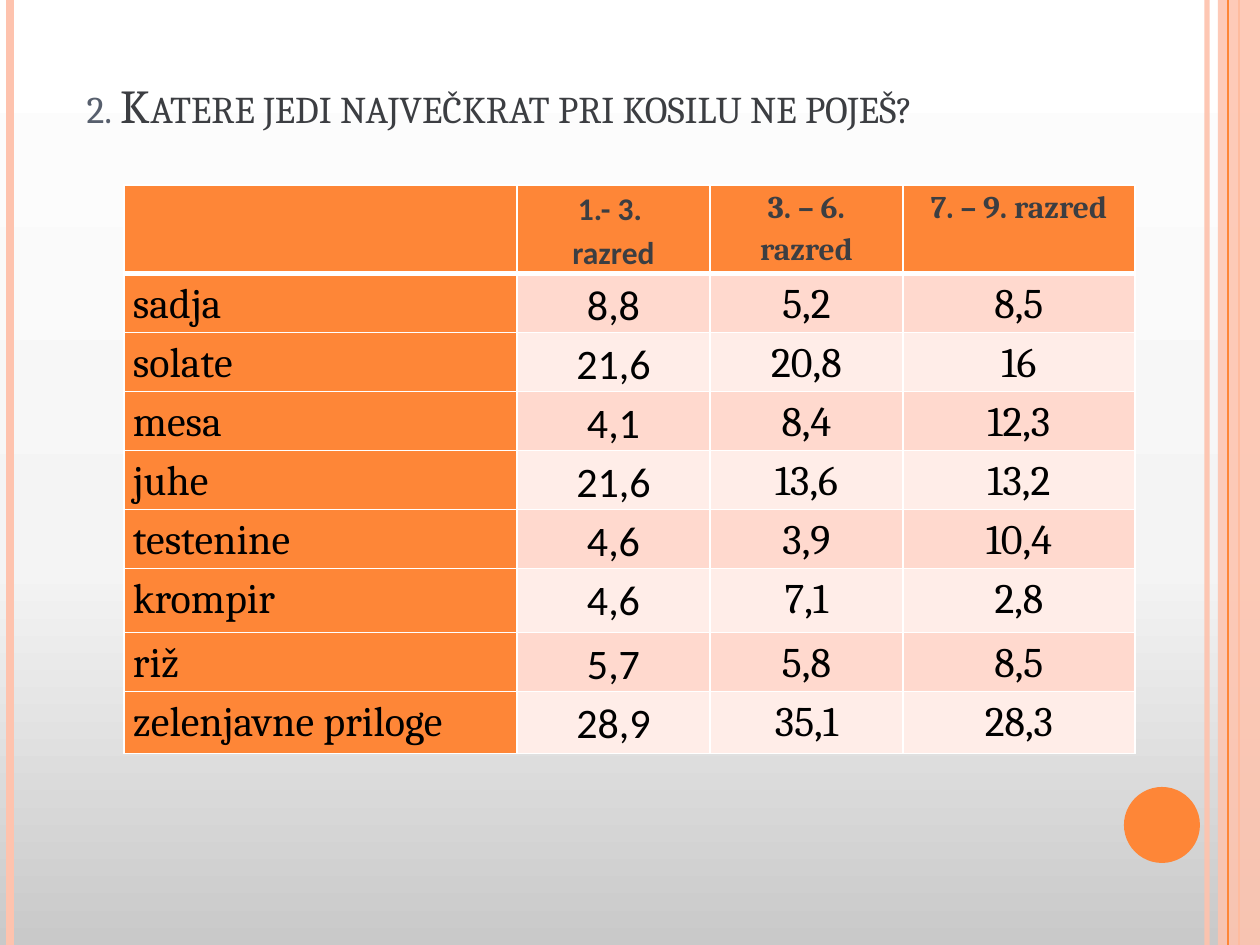
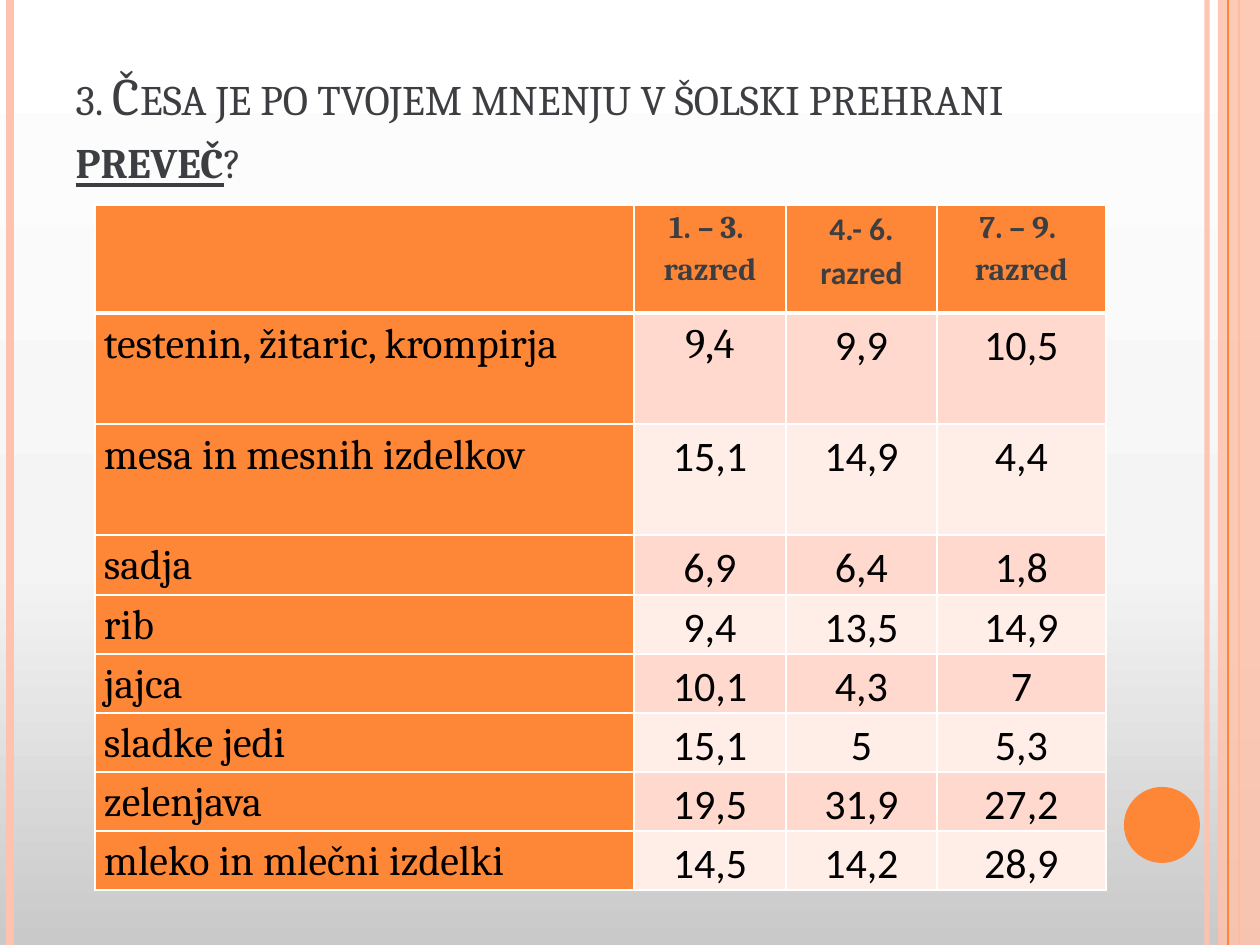
import copy

import lxml.etree
import pptx
import pptx.dml.color
import pptx.enum.shapes
import pptx.enum.text
import pptx.oxml.ns
import pptx.util

RGBColor = pptx.dml.color.RGBColor
ORANGE = RGBColor(0xFE, 0x86, 0x37)
PEACH = RGBColor(0xFE, 0xC3, 0xAE)
BAND_DARK = RGBColor(0xFF, 0xD9, 0xCE)
BAND_LIGHT = RGBColor(0xFF, 0xED, 0xE8)
CHARCOAL = RGBColor(0x3C, 0x3E, 0x42)
SLATE = RGBColor(0x57, 0x5F, 0x6D)
BLACK = RGBColor(0, 0, 0)
WHITE = RGBColor(0xFF, 0xFF, 0xFF)
BACKGROUND = [(0, RGBColor(0xC9, 0xC9, 0xC9)),
              (0.4, RGBColor(0xF4, 0xF4, 0xF4)),
              (1, WHITE)]

SERIF, SANS = "Cambria", "Calibri"
WIDTH, HEIGHT = 1260, 945
CELL_INSET = 9

# Table rows: a label and one value per group of classes
NOT_EATEN = [
    ("", "1.- 3. \nrazred", "3. – 6. razred", "7. – 9. razred"),
    ("sadja", "8,8", "5,2", "8,5"),
    ("solate", "21,6", "20,8", "16"),
    ("mesa", "4,1", "8,4", "12,3"),
    ("juhe", "21,6", "13,6", "13,2"),
    ("testenine", "4,6", "3,9", "10,4"),
    ("krompir", "4,6", "7,1", "2,8"),
    ("riž", "5,7", "5,8", "8,5"),
    ("zelenjavne priloge", "28,9", "35,1", "28,3"),
]
TOO_MUCH = [
    ("", "1. – 3. \nrazred", "4.- 6.\nrazred", "7. – 9. \nrazred"),
    ("testenin, žitaric, krompirja", "9,4", "9,9", "10,5"),
    ("mesa in mesnih izdelkov", "15,1", "14,9", "4,4"),
    ("sadja", "6,9", "6,4", "1,8"),
    ("rib", "9,4", "13,5", "14,9"),
    ("jajca", "10,1", "4,3", "7"),
    ("sladke jedi", "15,1", "5", "5,3"),
    ("zelenjava", "19,5", "31,9", "27,2"),
    ("mleko in mlečni izdelki", "14,5", "14,2", "28,9"),
]


def px(length):
    return round(length * 914400 / 126)


def sub_element(parent, tag, **attributes):
    return lxml.etree.SubElement(parent, pptx.oxml.ns.qn(tag), **attributes)


def write_run(paragraph, text, size, color, font=SERIF, bold=False,
              underline=False, small_caps=False):
    run = paragraph.add_run()
    run.text = text
    run.font.name = font
    run.font.size = pptx.util.Pt(size)
    run.font.color.rgb = color
    run.font.bold = bold
    run.font.underline = underline
    if small_caps:
        run.font._element.set("cap", "small")


def set_opacity(shape, percent):
    for color in shape.element.spPr.iter(pptx.oxml.ns.qn("a:srgbClr")):
        sub_element(color, "a:alpha", val=str(percent * 1000))


# Shared background and right-hand bands
def add_stripe(slide, x, color, weight, opacity=100):
    stripe = slide.shapes.add_connector(
        pptx.enum.shapes.MSO_CONNECTOR.STRAIGHT, px(x), 0, px(x), px(HEIGHT))
    stripe.line.color.rgb = color
    stripe.line.width = pptx.util.Pt(weight)
    if opacity < 100:
        set_opacity(stripe, opacity)
    sub_element(stripe.element.spPr, "a:effectLst")
    return stripe


def add_plain_shape(slide, kind, box, color):
    shape = slide.shapes.add_shape(kind, *map(px, box))
    shape.fill.solid()
    shape.fill.fore_color.rgb = color
    shape.line.fill.background()
    shape.shadow.inherit = False
    return shape


def paint_background(master):
    fill = master.background.fill
    fill.gradient()
    fill.gradient_angle = 90
    stops = master.element.xpath(".//p:bg//a:gsLst")[0]
    stops.insert(1, copy.deepcopy(stops[0]))
    for stop, (position, color) in zip(fill.gradient_stops, BACKGROUND):
        stop.position = position
        stop.color.rgb = color


def decorate_master(master, slide):
    """Draw the decoration on a slide, then move it to the master."""
    paint_background(master)
    kinds = pptx.enum.shapes.MSO_SHAPE
    decoration = [
        add_stripe(slide, 1207, PEACH, 3, opacity=93),
        add_stripe(slide, 10, PEACH, 4.5),
        add_stripe(slide, 1239, ORANGE, 1.5),
        add_plain_shape(slide, kinds.RECTANGLE, (1218, 0, 42, HEIGHT), PEACH),
        add_stripe(slide, 1228, ORANGE, 0.75),
        add_plain_shape(slide, kinds.OVAL, (1124, 787, 76, 76), ORANGE),
    ]
    set_opacity(decoration[3], 87)
    for number, part in enumerate(decoration, start=101):
        part.element.xpath(".//p:cNvPr")[0].set("id", str(number))
        master.shapes.element.append(part.element)


# Title in the template's placeholder
def write_title(slide, box, runs, size, bottom_inset=6):
    title = slide.shapes.title
    title.left, title.top, title.width, title.height = map(px, box)
    frame = title.text_frame
    frame.auto_size = pptx.enum.text.MSO_AUTO_SIZE.NONE
    frame.vertical_anchor = pptx.enum.text.MSO_ANCHOR.BOTTOM
    frame.margin_bottom = px(bottom_inset)
    paragraph = frame.paragraphs[0]
    paragraph.alignment = pptx.enum.text.PP_ALIGN.LEFT
    for text, style in runs:
        write_run(paragraph, text, size, small_caps=True,
                  **{"color": CHARCOAL, **style})


# Survey table
def set_borders(cell, weights):
    properties = cell._tc.get_or_add_tcPr()
    for index, (side, weight) in enumerate(weights.items()):
        border = lxml.etree.Element(pptx.oxml.ns.qn(f"a:ln{side}"),
                                    w=str(pptx.util.Pt(weight)))
        fill = sub_element(border, "a:solidFill")
        sub_element(fill, "a:srgbClr", val=str(WHITE))
        properties.insert(index, border)


def fill_cell(cell, text, row, column, font):
    is_header, is_label = row == 0, column == 0
    cell.margin_left = cell.margin_right = px(CELL_INSET)
    cell.margin_top = cell.margin_bottom = 0
    cell.fill.solid()
    band = BAND_DARK if row % 2 else BAND_LIGHT
    cell.fill.fore_color.rgb = ORANGE if is_header or is_label else band
    set_borders(cell, {"L": 1, "R": 1, "T": 3 if row == 1 else 1,
                       "B": 3 if is_header else 1})
    if not text:
        return
    frame = cell.text_frame
    for index, line in enumerate(text.split("\n")):
        paragraph = frame.add_paragraph() if index else frame.paragraphs[0]
        paragraph.line_spacing = 1.15
        if not is_label:
            paragraph.alignment = pptx.enum.text.PP_ALIGN.CENTER
        write_run(paragraph, line, 18 if is_header else 24,
                  CHARCOAL if is_header else BLACK, font=font, bold=is_header)


def add_survey_table(slide, left, top, widths, heights, answers,
                     body_fonts, special_fonts):
    """special_fonts maps a row number to its fonts, if not body_fonts."""
    table = slide.shapes.add_table(
        len(heights), len(widths), px(left), px(top),
        px(sum(widths)), px(sum(heights))).table
    table.first_row = table.horz_banding = False
    for column, width in zip(table.columns, widths):
        column.width = px(width)
    for row, (height, texts) in enumerate(zip(heights, answers)):
        table.rows[row].height = px(height)
        fonts = special_fonts.get(row, body_fonts)
        for column, (text, font) in enumerate(zip(texts, fonts)):
            fill_cell(table.cell(row, column), text, row, column, font)


def main():
    deck = pptx.Presentation()
    deck.slide_width, deck.slide_height = px(WIDTH), px(HEIGHT)
    title_only = deck.slide_layouts[5]

    # Question 2: dishes left uneaten
    uneaten = deck.slides.add_slide(title_only)
    decorate_master(deck.slide_master, uneaten)
    write_title(uneaten, (74, 26, 1053, 169), [
        ("2. ", {"color": SLATE}),
        ("Katere jedi največkrat pri kosilu ne poješ?", {}),
    ], size=27, bottom_inset=62)
    add_survey_table(uneaten, 124, 185, [393, 193, 193, 232],
                     [88] + [59] * 5 + [64, 59, 62], NOT_EATEN,
                     body_fonts=(SERIF, SANS, SERIF, SERIF), special_fonts={})

    # Question 3: too much of what
    excess = deck.slides.add_slide(title_only)
    write_title(excess, (63, 38, 1029, 157), [
        ("3. Česa je po tvojem mnenju v šolski prehrani ", {}),
        ("preveč", {"bold": True, "underline": True}),
        ("?", {}),
    ], size=30)
    add_survey_table(excess, 95, 205, [539, 152, 151, 169],
                     [108, 111, 111, 60] + [59] * 5, TOO_MUCH,
                     body_fonts=(SERIF, SANS, SANS, SANS),
                     special_fonts={0: (SERIF, SERIF, SANS, SERIF),
                                    1: (SERIF, SERIF, SANS, SANS)})

    deck.save("out.pptx")


if __name__ == "__main__":
    main()
